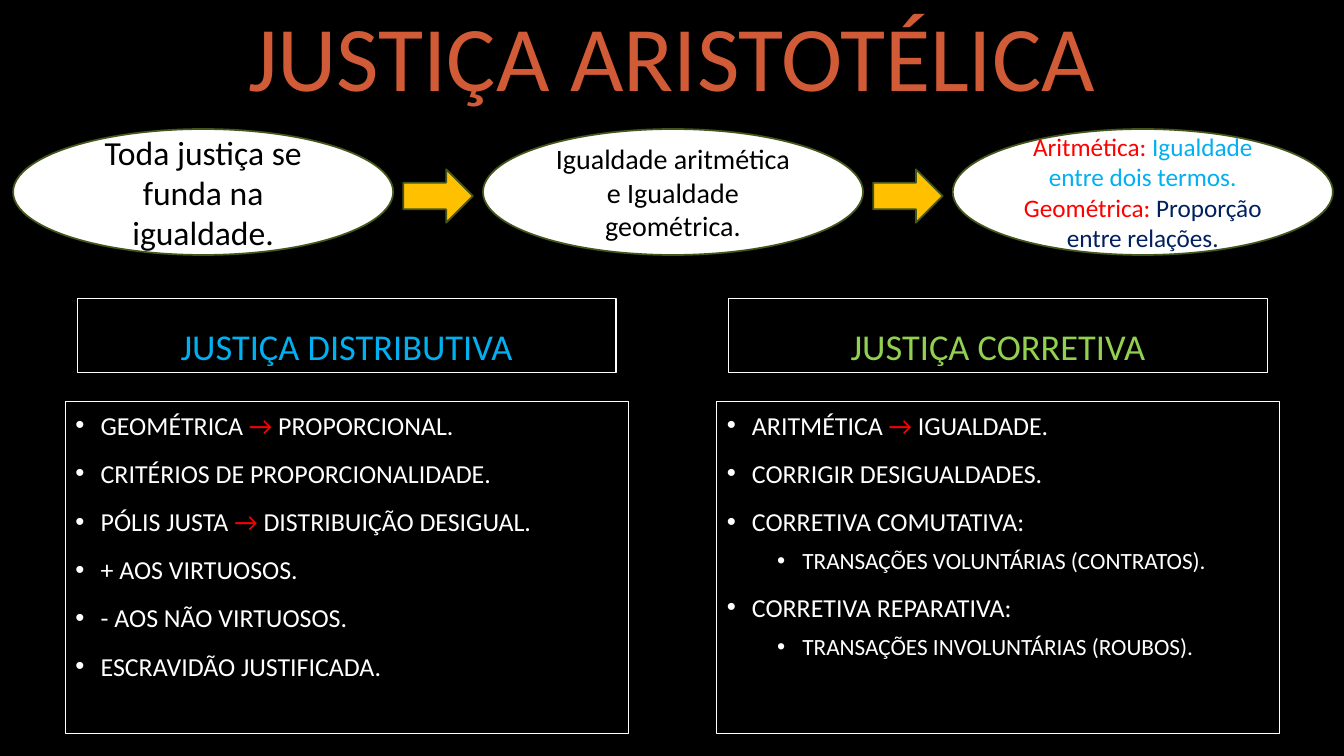
from lxml.etree import SubElement
from pptx import Presentation
from pptx.dml.color import RGBColor
from pptx.enum.shapes import MSO_SHAPE
from pptx.enum.text import MSO_ANCHOR, PP_ALIGN
from pptx.oxml.ns import qn
from pptx.util import Inches, Pt

FONT = "Calibri"
BLACK, WHITE, RED, BLUE = "000000", "FFFFFF", "FF0000", "00B0F0"
NAVY, GREEN, ORANGE, GOLD, OLIVE = "002060", "92D050", "D15B37", "FFC000", "43561B"

# A paragraph is a list of (text, colour) spans.
TITLE = [("JUSTIÇA ARISTOTÉLICA", ORANGE)]
IDEAS = [  # text size, paragraphs
    (24, [[("Toda justiça se funda na igualdade.", BLACK)]]),
    (20, [[("Igualdade aritmética e Igualdade geométrica.", BLACK)]]),
    (18, [[("Aritmética: ", RED), ("Igualdade entre dois termos.", BLUE)],
          [("Geométrica: ", RED), ("Proporção entre relações.", NAVY)]]),
]
COLUMNS = [  # heading, colour, (level, text) points
    ("JUSTIÇA DISTRIBUTIVA", BLUE, [
        (0, "GEOMÉTRICA → PROPORCIONAL."),
        (0, "CRITÉRIOS DE PROPORCIONALIDADE."),
        (0, "PÓLIS JUSTA → DISTRIBUIÇÃO DESIGUAL."),
        (0, "+ AOS VIRTUOSOS."),
        (0, "- AOS NÃO VIRTUOSOS."),
        (0, "ESCRAVIDÃO JUSTIFICADA."),
    ]),
    ("JUSTIÇA CORRETIVA", GREEN, [
        (0, "ARITMÉTICA → IGUALDADE."),
        (0, "CORRIGIR DESIGUALDADES."),
        (0, "CORRETIVA COMUTATIVA:"),
        (1, "TRANSAÇÕES VOLUNTÁRIAS (CONTRATOS)."),
        (0, "CORRETIVA REPARATIVA:"),
        (1, "TRANSAÇÕES INVOLUNTÁRIAS (ROUBOS)."),
    ]),
]
POINT_SIZES, POINT_GAPS = (18.5, 16.6), (10, 5)  # by level

# Grid, in inches
SLIDE_WIDTH, SLIDE_HEIGHT = 13.33, 7.5
IDEA_LEFT, IDEA_TOP, IDEA_WIDTH, IDEA_HEIGHT, IDEA_STEP = 0.13, 1.28, 3.77, 1.25, 4.66
ARROW_TOP, ARROW_WIDTH, ARROW_HEIGHT = 1.68, 0.69, 0.53
COLUMN_LEFT, COLUMN_WIDTH, COLUMN_STEP = 0.65, 5.58, 6.46
HEADING_INSET, HEADING_TOP, HEADING_HEIGHT = 0.12, 2.96, 0.74
LIST_TOP, LIST_HEIGHT = 3.98, 3.3
INDENT, LEVEL_STEP = 0.25, 0.5


def color(value):
    return RGBColor.from_string(value)


def add_box(kind, place, fill, line, weight):
    box = page.shapes.add_shape(kind, *map(Inches, place))
    box.shadow.inherit = False
    if fill:
        box.fill.solid()
        box.fill.fore_color.rgb = color(fill)
    else:
        box.fill.background()
    box.line.color.rgb = color(line)
    box.line.width = Pt(weight)
    return box


def write(box, paragraphs, size, anchor=MSO_ANCHOR.MIDDLE, spacing=None):
    """Fill the box with centred paragraphs of coloured spans."""
    frame = box.text_frame
    frame.word_wrap = True
    frame.vertical_anchor = anchor
    for index, spans in enumerate(paragraphs):
        para = frame.add_paragraph() if index else frame.paragraphs[0]
        para.alignment = PP_ALIGN.CENTER
        para.line_spacing = spacing
        para.font.name, para.font.size = FONT, Pt(size)
        add_spans(para, spans)


def add_spans(para, spans):
    for text, tint in spans:
        span = para.add_run()
        span.text = text
        span.font.color.rgb = color(tint)


def add_bullet(para, level):
    properties = para._p.get_or_add_pPr()
    properties.set("marL", str(Inches(INDENT + level * LEVEL_STEP)))
    properties.set("indent", str(-Inches(INDENT)))
    tint = SubElement(properties, qn("a:buClr"))
    SubElement(tint, qn("a:srgbClr"), val=WHITE)
    SubElement(properties, qn("a:buFont"), typeface="Arial")
    SubElement(properties, qn("a:buChar"), char="•")


def write_points(box, points):
    """Fill the box with bulleted points, their arrows in red."""
    frame = box.text_frame
    frame.word_wrap = True
    frame.vertical_anchor = MSO_ANCHOR.TOP
    for index, (level, text) in enumerate(points):
        para = frame.add_paragraph() if index else frame.paragraphs[0]
        add_bullet(para, level)
        para.level = level
        para.alignment = PP_ALIGN.LEFT
        para.line_spacing = 1.1
        para.space_before = Pt(POINT_GAPS[level] if index else 0)
        para.font.name, para.font.size = FONT, Pt(POINT_SIZES[level])
        before, arrow, after = text.partition("→")
        spans = [(before, WHITE), (arrow, RED), (after, WHITE)]
        add_spans(para, [span for span in spans if span[0]])


deck = Presentation()
deck.slide_width, deck.slide_height = Inches(SLIDE_WIDTH), Inches(SLIDE_HEIGHT)
page = deck.slides.add_slide(deck.slide_layouts[6])
page.background.fill.solid()
page.background.fill.fore_color.rgb = color(BLACK)

title = page.shapes.add_textbox(*map(Inches, (1, 0.07, SLIDE_WIDTH - 2, 1.09)))
write(title, [TITLE], 66, spacing=0.9)

for index, (heading, tint, points) in enumerate(COLUMNS):
    left = COLUMN_LEFT + index * COLUMN_STEP
    heading_place = (left + HEADING_INSET, HEADING_TOP,
                     COLUMN_WIDTH - 2 * HEADING_INSET, HEADING_HEIGHT)
    heading_box = add_box(MSO_SHAPE.RECTANGLE, heading_place, None, WHITE, 0.75)
    write(heading_box, [[(heading, tint)]], 26, MSO_ANCHOR.BOTTOM, 0.85)
    list_place = (left, LIST_TOP, COLUMN_WIDTH, LIST_HEIGHT)
    write_points(add_box(MSO_SHAPE.RECTANGLE, list_place, None, WHITE, 0.75), points)

for index, (size, paragraphs) in enumerate(IDEAS):
    left = IDEA_LEFT + index * IDEA_STEP
    place = (left, IDEA_TOP, IDEA_WIDTH, IDEA_HEIGHT)
    write(add_box(MSO_SHAPE.OVAL, place, WHITE, OLIVE, 1.25), paragraphs, size)
    if index:
        gap = IDEA_STEP - IDEA_WIDTH
        arrow_left = left - (gap + ARROW_WIDTH) / 2
        arrow_place = (arrow_left, ARROW_TOP, ARROW_WIDTH, ARROW_HEIGHT)
        add_box(MSO_SHAPE.RIGHT_ARROW, arrow_place, GOLD, OLIVE, 1.25)

deck.save("out.pptx")
